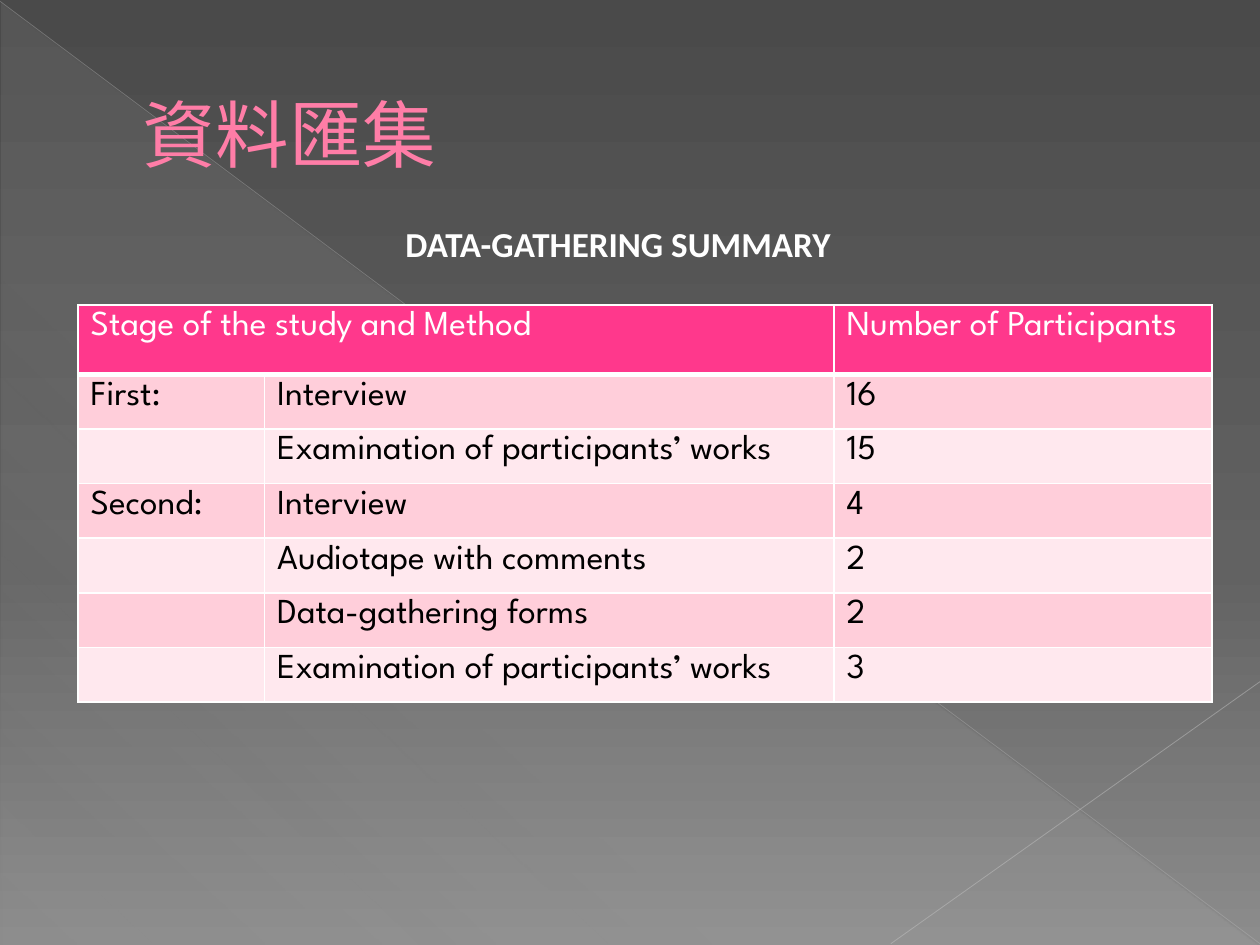
from lxml import etree
from pptx import Presentation
from pptx.dml.color import RGBColor
from pptx.enum import shapes, text
from pptx.oxml import parse_xml
from pptx.oxml.ns import nsdecls, qn
from pptx.util import Inches, Pt

COLORS = {
    "title": "FF7DA7", "title_edge": "B12761", "white": "FFFFFF",
    "black": "000000", "header": "FF388C", "band_dark": "FFCEDA",
    "band_light": "FFE8EE", "bg_top": "4A4A4A", "bg_mid": "626262",
    "bg_bottom": "8C8C8C", "sheen": "D2D2D2", "line_down": "BFBFBF",
    "line_up": "C6C6C6",
}
FONT = "League Spartan"
HEADER = ("Stage of the study and Method", "", "Number of Participants")
ROWS = [
    ("First:", "Interview", "16"),
    ("", "Examination of participants’ works", "15"),
    ("Second:", "Interview", "4"),
    ("", "Audiotape with comments", "2"),
    ("", "Data-gathering forms", "2"),
    ("", "Examination of participants’ works", "3"),
]
COL_WIDTHS = (1.48, 4.52, 3)
HEADER_HEIGHT, ROW_HEIGHT = 0.55, 0.405


def rgb(name):
    return RGBColor.from_string(COLORS[name])


def add_alpha(clr, percent):
    etree.SubElement(clr, qn("a:alpha")).set("val", str(percent * 1000))


def set_gradient(fill, root, stops, angle):
    """Stops are (position %, colour name, opacity %)."""
    fill.gradient()
    grad = root.find(".//" + qn("a:gradFill"))
    for child in list(grad):
        grad.remove(child)
    gs_list = etree.SubElement(grad, qn("a:gsLst"))
    for pos, name, opacity in stops:
        gs = etree.SubElement(gs_list, qn("a:gs"), pos=str(pos * 1000))
        clr = etree.SubElement(gs, qn("a:srgbClr"), val=COLORS[name])
        if opacity < 100:
            add_alpha(clr, opacity)
    etree.SubElement(grad, qn("a:lin"), ang=str(angle * 60000), scaled="0")


def write(tf, content, size=20, font=FONT, color="white", bold=False):
    r = tf.paragraphs[0].add_run()
    r.text = content
    r.font.size, r.font.name, r.font.bold = Pt(size), font, bold
    r.font.color.rgb = rgb(color)
    return r


def add_line(slide, start, end, color, width, opacity):
    points = [Inches(v) for v in (*start, *end)]
    line = slide.shapes.add_connector(shapes.MSO_CONNECTOR.STRAIGHT, *points)
    line.line.color.rgb = rgb(color)
    line.line.width = Pt(width)
    add_alpha(line._element.find(".//" + qn("a:ln")).find(".//" + qn("a:srgbClr")), opacity)
    etree.SubElement(line._element.spPr, qn("a:effectLst"))


def add_backdrop(slide, width, height):
    set_gradient(slide.background.fill, slide._element,
                 [(0, "bg_top", 100), (60, "bg_mid", 100), (100, "bg_bottom", 100)], 90)
    sp = slide.shapes.add_shape(shapes.MSO_SHAPE.RIGHT_TRIANGLE, Inches(0.01), Inches(0.02),
                                Inches(width - 0.02), Inches(height - 0.02))
    sp.shadow.inherit = False
    sp.line.fill.background()
    set_gradient(sp.fill, sp._element,
                 [(0, "sheen", 10), (70, "sheen", 8), (100, "sheen", 1)], 133)
    add_line(slide, (0, 0.01), (width, height - 0.01), "line_down", 0.39, 35)
    add_line(slide, (width, 5.41), (7.07, height - 0.01), "line_up", 0.47, 45)


def add_text_box(slide, left, top, width, height):
    box = slide.shapes.add_textbox(Inches(left), Inches(top), Inches(width), Inches(height))
    box.text_frame.word_wrap = True
    return box.text_frame


def add_title(slide, left, top, width, height):
    tf = add_text_box(slide, left, top, width, height)
    tf.vertical_anchor = text.MSO_ANCHOR.MIDDLE
    r = write(tf, "資料匯集", size=42, color="title")
    tf.paragraphs[0]._p.get_or_add_pPr().set("marL", str(Inches(0.53)))
    # Thin outline around the letters
    r.font._element.insert(0, parse_xml(
        f'<a:ln {nsdecls("a")} w="{Pt(0.5)}"><a:solidFill>'
        f'<a:srgbClr val="{COLORS["title_edge"]}"/></a:solidFill></a:ln>'))


def add_caption(slide, left, top, width, height):
    tf = add_text_box(slide, left, top, width, height)
    write(tf, "DATA-GATHERING SUMMARY", font="Calibri", bold=True)


def set_borders(cell, top=1, bottom=1):
    tc_pr = cell._tc.get_or_add_tcPr()
    for i, (side, width) in enumerate((("L", 1), ("R", 1), ("T", top), ("B", bottom))):
        tc_pr.insert(i, parse_xml(
            f'<a:ln{side} {nsdecls("a")} w="{Pt(width)}"><a:solidFill>'
            f'<a:srgbClr val="{COLORS["white"]}"/></a:solidFill></a:ln{side}>'))


def add_summary_table(slide, left, top):
    height = HEADER_HEIGHT + ROW_HEIGHT * len(ROWS)
    table = slide.shapes.add_table(len(ROWS) + 1, len(COL_WIDTHS), Inches(left), Inches(top),
                                   Inches(sum(COL_WIDTHS)), Inches(height)).table
    for col, width in zip(table.columns, COL_WIDTHS):
        col.width = Inches(width)
    for i, values in enumerate([HEADER, *ROWS]):
        is_header = i == 0
        table.rows[i].height = Inches(HEADER_HEIGHT if is_header else ROW_HEIGHT)
        band = "header" if is_header else ("band_dark" if i % 2 else "band_light")
        for j, value in enumerate(values):
            cell = table.cell(i, j)
            cell.fill.solid()
            cell.fill.fore_color.rgb = rgb(band)
            set_borders(cell, top=3 if i == 1 else 1, bottom=3 if is_header else 1)
            if value:
                write(cell.text_frame, value, color="white" if is_header else "black")
    table.cell(0, 0).merge(table.cell(0, 1))


def main():
    prs = Presentation()
    prs.slide_width, prs.slide_height = Inches(10), Inches(7.5)
    slide = prs.slides.add_slide(prs.slide_layouts[6])
    add_backdrop(slide, 10, 7.5)
    add_title(slide, 0.5, 0.29, 9, 1.53)
    add_summary_table(slide, 0.62, 2.42)
    add_caption(slide, 3.12, 1.72, 3.67, 0.44)
    prs.save("out.pptx")


if __name__ == "__main__":
    main()
